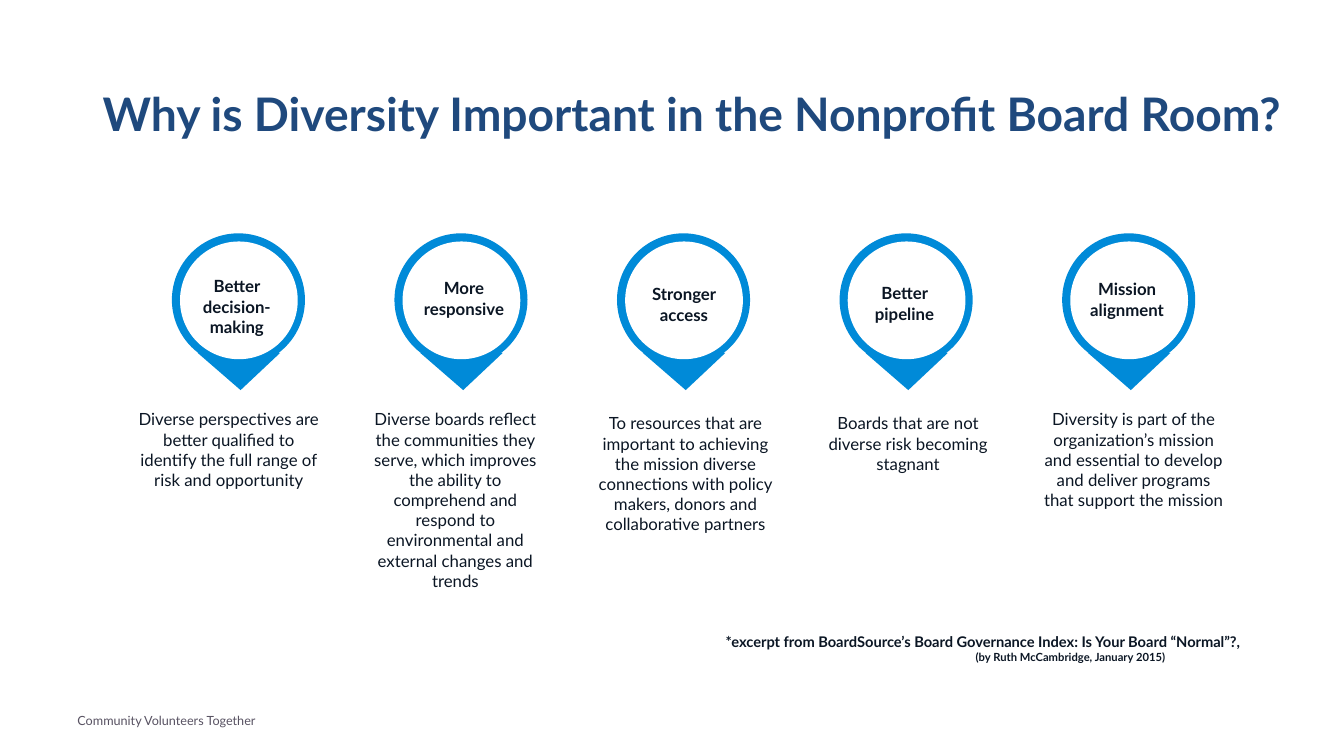
from dataclasses import dataclass

from pptx import Presentation
from pptx import util as u
from pptx.dml.color import RGBColor
from pptx.enum import shapes, text

# The slide is laid out on a grid of square cells, ten to the inch.
COLUMNS, ROWS = 133.33, 75
FONT = "Lato"
NAVY, BLUE, WHITE, INK, GREY = "1F497D", "008AD8", "FFFFFF", "0B1624", "585262"
FIRST_PIN, PIN_PITCH, PIN_TOP = 17.05, 22.08, 23.15
DISC, TIP_WIDTH, TIP_HEIGHT, HOLE = 13.2, 8.2, 3.7, 11.4
LABEL_WIDTH, CAPTION_WIDTH = 10.3, 20


@dataclass
class Area:
    """A rectangle in grid cells."""
    column: float
    row: float
    width: float
    height: float

    def lengths(self) -> list[int]:
        return [cells(n) for n in (self.column, self.row, self.width, self.height)]


@dataclass
class Style:
    size: float
    color: str = INK
    bold: bool = False
    align: text.PP_ALIGN = text.PP_ALIGN.LEFT
    anchor: text.MSO_ANCHOR = text.MSO_ANCHOR.TOP


@dataclass
class Benefit:
    """A pin's label and the caption below it; columns count from the pin's left edge."""
    label: str
    label_column: float
    label_row: float
    caption: str
    caption_column: float
    caption_row: float


BENEFITS = [
    Benefit("Better decision-making", 1.3, 26.9,
            "Diverse perspectives are better qualified to identify the full range "
            "of risk and opportunity", -4.35, 40.1),
    Benefit("More responsive", 1.75, 27.1,
            "Diverse boards reflect the communities they serve, which improves the "
            "ability to comprehend and respond to environmental and external "
            "changes and trends", -3.95, 40.1),
    Benefit("Stronger access", 1.5, 27.7,
            "To resources that are important to achieving the mission diverse "
            "connections with policy makers, donors and collaborative partners",
            -3.2, 40.5),
    Benefit("Better pipeline", 1.3, 27.6,
            "Boards that are not diverse risk becoming stagnant", -3.2, 40.5),
    Benefit("Mission alignment", 1.3, 27.2,
            "Diversity is part of the organization’s mission and essential to develop "
            "and deliver programs that support the mission", -2.9, 40.1),
]

LABEL = Style(12, bold=True, align=text.PP_ALIGN.CENTER)
CAPTION = Style(12, align=text.PP_ALIGN.CENTER)


def cells(count: float) -> int:
    return u.Inches(count / 10)


def rgb(color: str) -> RGBColor:
    return RGBColor.from_string(color)


def format_paragraph(paragraph, style: Style) -> None:
    paragraph.alignment = style.align
    for run in paragraph.runs:
        run.font.name = FONT
        run.font.size = u.Pt(style.size)
        run.font.bold = style.bold
        run.font.color.rgb = rgb(style.color)


def add_text(parent, words: str, area: Area, style: Style):
    frame = parent.add_textbox(*area.lengths()).text_frame
    frame.word_wrap = True
    frame.vertical_anchor = style.anchor
    frame.text = words
    format_paragraph(frame.paragraphs[0], style)
    return frame


def add_solid(parent, kind: shapes.MSO_SHAPE, area: Area, color: str):
    solid = parent.add_shape(kind, *area.lengths())
    solid.shadow.inherit = False
    solid.fill.solid()
    solid.fill.fore_color.rgb = rgb(color)
    solid.line.fill.background()
    return solid


def add_benefit(slide, benefit: Benefit, left: float) -> None:
    pin = slide.shapes.add_group_shape().shapes
    oval = shapes.MSO_SHAPE.OVAL
    add_solid(pin, oval, Area(left, PIN_TOP, DISC, DISC), BLUE)
    tip = add_solid(pin, shapes.MSO_SHAPE.ISOSCELES_TRIANGLE,
                    Area(left + 2.55, 35, TIP_WIDTH, TIP_HEIGHT), BLUE)
    tip.rotation = 180
    tip.adjustments[0] = 0.48
    hole = add_solid(pin, oval, Area(left + 0.95, PIN_TOP + 0.95, HOLE, HOLE), WHITE)
    hole.line.color.rgb = rgb(WHITE)
    hole.line.width = u.Pt(2)
    add_text(pin, benefit.label,
             Area(left + benefit.label_column, benefit.label_row, LABEL_WIDTH, 7.1), LABEL)
    add_text(slide.shapes, benefit.caption,
             Area(left + benefit.caption_column, benefit.caption_row,
                  CAPTION_WIDTH, 19.2), CAPTION)


def add_citation(slide) -> None:
    frame = add_text(slide.shapes,
                     "*excerpt from BoardSource’s Board Governance Index: "
                     "Is Your Board “Normal”?,",
                     Area(71, 62.3, 57.9, 5.9), Style(10.5, bold=True))
    author = frame.add_paragraph()
    author.text = "(by Ruth McCambridge, January 2015)"
    format_paragraph(author, Style(8, bold=True))
    properties = author._p.get_or_add_pPr()
    properties.set("marL", str(cells(24.8)))
    properties.set("indent", "0")


def main() -> None:
    deck = Presentation()
    deck.slide_width, deck.slide_height = cells(COLUMNS), cells(ROWS)
    slide = deck.slides.add_slide(deck.slide_layouts[6])
    middle = text.MSO_ANCHOR.MIDDLE
    add_text(slide.shapes, "Why is Diversity Important in the Nonprofit Board Room?",
             Area(9.2, 4, 126.4, 14.5), Style(33, NAVY, bold=True, anchor=middle))
    for index, benefit in enumerate(BENEFITS):
        add_benefit(slide, benefit, FIRST_PIN + index * PIN_PITCH)
    add_citation(slide)
    add_text(slide.shapes, "Community Volunteers Together",
             Area(6.7, 69.5, 81.1, 4), Style(9, GREY, anchor=middle))
    deck.save("out.pptx")


if __name__ == "__main__":
    main()
